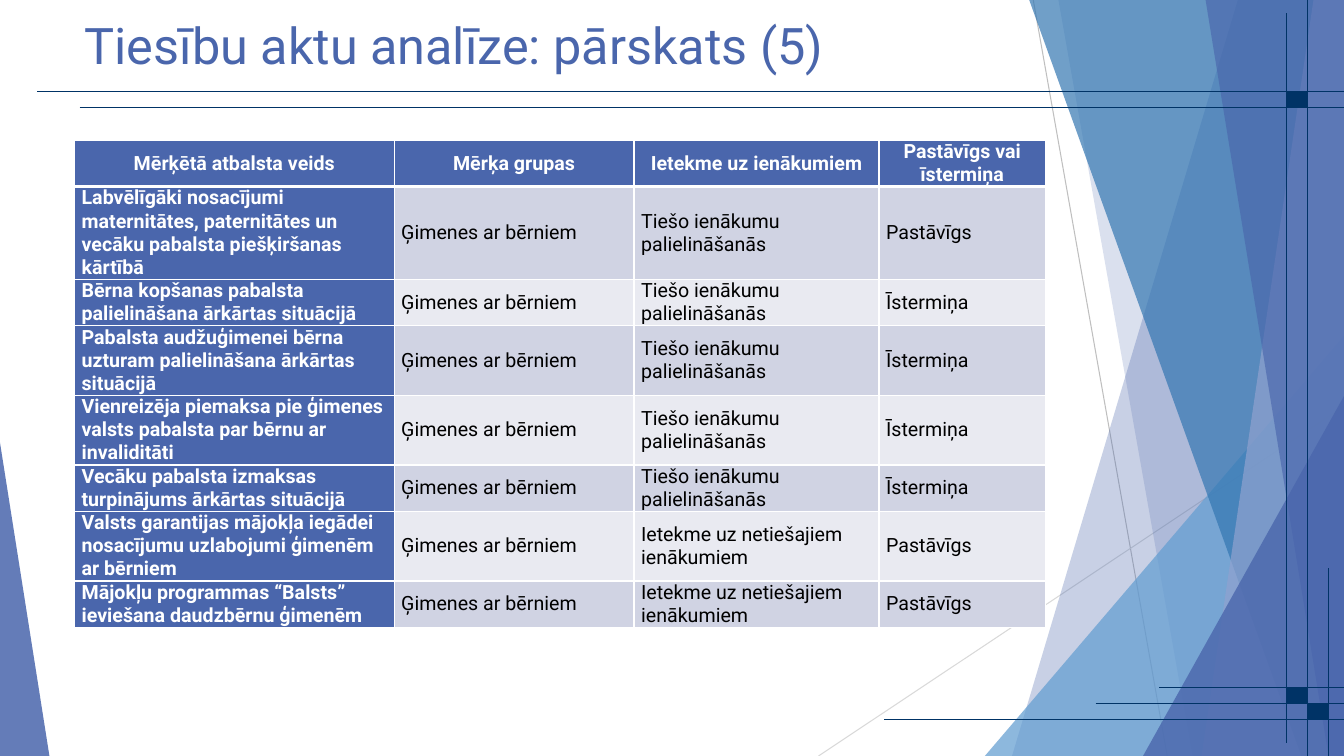
from lxml.etree import SubElement
from pptx import Presentation
from pptx.dml.color import RGBColor
from pptx.enum.shapes import MSO_CONNECTOR as Connector, MSO_SHAPE as Shape
from pptx.enum.text import MSO_ANCHOR as Anchor, PP_ALIGN as Align
from pptx.oxml.ns import qn
from pptx.util import Inches, Pt

BLUE = RGBColor(0x4A, 0x66, 0xAC)
SKY = RGBColor(0x62, 0x9D, 0xD1)
OCEAN = RGBColor(0x34, 0x77, 0xB2)
LAVENDER = RGBColor(0x90, 0xA2, 0xCF)
NAVY = RGBColor(0x00, 0x33, 0x66)
GREY = RGBColor(0xBF, 0xBF, 0xBF)
PALE_GREY = RGBColor(0xD9, 0xD9, 0xD9)
DARK_BAND = RGBColor(0xD0, 0xD3, 0xE3)
LIGHT_BAND = RGBColor(0xE9, 0xEA, 0xF1)
WHITE = RGBColor(0xFF, 0xFF, 0xFF)
BLACK = RGBColor(0, 0, 0)

# All lengths below are percentages of the slide's width or height.
# Bands run to the right edge: top-left x, bottom-left x, colour, opacity.
BANDS_BEHIND = [(92.1, 75.3, BLUE, 30), (78.75, 88.73, BLUE, 20)]
BANDS_IN_FRONT = [
    (76.58, 96.83, OCEAN, 70),
    (97.73, 89.4, LAVENDER, 70),
    (89.7, 98.85, BLUE, 65),
]
# Rules: start x, start y, end x, end y.
RULES = [
    (2.78, 12.13, 100, 12.13),
    (5.93, 14.27, 100, 14.27),
    (97.28, 0, 97.28, 100),
    (95.7, 1.73, 95.7, 98.27),
    (81.53, 93.07, 100, 93.07),
    (86.25, 90.93, 100, 90.93),
    (65.78, 95.2, 100, 95.2),
    (98.85, 75.2, 98.85, 100),
]
SQUARES = [(95.7, 12.13), (95.7, 90.93), (97.28, 93.07)]

COLUMN_WIDTHS = [23.78, 17.85, 18.23, 12.38]
LINE_HEIGHT = 3.07
HEADER = ["Mērķētā atbalsta veids", "Mērķa grupas",
          "Ietekme uz ienākumiem", "Pastāvīgs vai īstermiņa"]
FAMILIES = "Ģimenes ar bērniem"
DIRECT = "Tiešo ienākumu palielināšanās"
INDIRECT = "Ietekme uz netiešajiem ienākumiem"
LASTING = "Pastāvīgs"
SHORT_TERM = "Īstermiņa"
# Support measure, income effect, duration, number of text lines.
MEASURES = [
    ("Labvēlīgāki nosacījumi maternitātes, paternitātes un vecāku pabalsta "
     "piešķiršanas kārtībā", DIRECT, LASTING, 4),
    ("Bērna kopšanas pabalsta palielināšana ārkārtas situācijā", DIRECT, SHORT_TERM, 2),
    ("Pabalsta audžuģimenei bērna uzturam palielināšana ārkārtas situācijā",
     DIRECT, SHORT_TERM, 3),
    ("Vienreizēja piemaksa pie ģimenes valsts pabalsta par bērnu ar invaliditāti",
     DIRECT, SHORT_TERM, 3),
    ("Vecāku pabalsta izmaksas turpinājums ārkārtas situācijā", DIRECT, SHORT_TERM, 2),
    ("Valsts garantijas mājokļa iegādei nosacījumu uzlabojumi ģimenēm ar bērniem",
     INDIRECT, LASTING, 3),
    ("Mājokļu programmas “Balsts” ieviešana daudzbērnu ģimenēm", INDIRECT, LASTING, 2),
]


class SlideBuilder:
    font_name = "Roboto"

    def __init__(self, deck):
        self.width, self.height = deck.slide_width, deck.slide_height
        self.slide = deck.slides.add_slide(deck.slide_layouts[5])
        self.shapes = self.slide.shapes

    def x(self, share):
        return round(self.width * share / 100)

    def y(self, share):
        return round(self.height * share / 100)

    def area(self, left, top, width, height):
        return self.x(left), self.y(top), self.x(width), self.y(height)

    def style_text(self, para, size, color, bold=False, align=Align.LEFT):
        para.alignment = align
        para.font.name, para.font.size = self.font_name, Pt(size)
        para.font.color.rgb, para.font.bold = color, bold

    def paint(self, shape, color, opacity=100):
        shape.shadow.inherit = False
        shape.fill.solid()
        shape.fill.fore_color.rgb = color
        shape.line.fill.background()
        if opacity < 100:
            paint = shape._element.spPr.find(qn("a:solidFill"))[0]
            SubElement(paint, qn("a:alpha"), val=str(opacity * 1000))

    def line(self, start_x, start_y, end_x, end_y, color=NAVY):
        rule = self.shapes.add_connector(
            Connector.STRAIGHT, self.x(start_x), self.y(start_y),
            self.x(end_x), self.y(end_y))
        rule.line.color.rgb, rule.line.width = color, Pt(0.75)
        SubElement(rule._element.spPr, qn("a:effectLst"))

    def band(self, top_x, bottom_x, color, opacity):
        outline = self.shapes.build_freeform(self.x(top_x), 0)
        outline.add_line_segments([
            (self.width, 0), (self.width, self.height),
            (self.x(bottom_x), self.height)])
        self.paint(outline.convert_to_shape(), color, opacity)

    def triangle(self, left, top, width, apex, color, opacity):
        """Draw a triangle standing on the bottom edge; apex is 0 to 1."""
        shape = self.shapes.add_shape(
            Shape.ISOSCELES_TRIANGLE, *self.area(left, top, width, 100 - top))
        shape.adjustments[0] = apex
        self.paint(shape, color, opacity)

    def square(self, left, top):
        shape = self.shapes.add_shape(Shape.RECTANGLE, *self.area(left, top, 1.58, 2.13))
        self.paint(shape, NAVY)
        shape.line.color.rgb, shape.line.width = NAVY, Pt(0.75)

    def title(self, text, left, top, width, height):
        box = self.shapes.title
        box.left, box.top, box.width, box.height = self.area(left, top, width, height)
        box.text_frame.text = text
        box.text_frame.word_wrap = True
        box.text_frame.vertical_anchor = Anchor.MIDDLE
        para = box.text_frame.paragraphs[0]
        para.line_spacing = 0.9
        self.style_text(para, 36, BLUE)

    def borders(self, cell, top, bottom):
        properties = cell._tc.get_or_add_tcPr()
        for side, points in (("L", 1), ("R", 1), ("T", top), ("B", bottom)):
            edge = SubElement(properties, qn(f"a:ln{side}"), w=str(Pt(points)))
            fill = SubElement(edge, qn("a:solidFill"))
            SubElement(fill, qn("a:srgbClr"), val=str(WHITE))

    def cell(self, cell, text, row, column):
        is_label = row == 0 or column == 0
        self.borders(cell, top=3 if row == 1 else 1, bottom=3 if row == 0 else 1)
        cell.fill.solid()
        band = DARK_BAND if row % 2 else LIGHT_BAND
        cell.fill.fore_color.rgb = BLUE if is_label else band
        cell.margin_left = cell.margin_right = Inches(0.07)
        cell.margin_top = cell.margin_bottom = 0
        cell.vertical_anchor = Anchor.MIDDLE
        cell.text = text
        self.style_text(cell.text_frame.paragraphs[0], 14, WHITE if is_label else BLACK,
                        is_label, Align.LEFT if row else Align.CENTER)

    def table(self, left, top, widths, rows, line_counts):
        place = self.area(left, top, sum(widths), sum(line_counts) * LINE_HEIGHT)
        table = self.shapes.add_table(len(rows), len(widths), *place).table
        for column, width in zip(table.columns, widths):
            column.width = self.x(width)
        for row, count in zip(table.rows, line_counts):
            row.height = self.y(count * LINE_HEIGHT)
        for r, texts in enumerate(rows):
            for c, text in enumerate(texts):
                self.cell(table.cell(r, c), text, r, c)


def main():
    deck = Presentation()
    deck.slide_width, deck.slide_height = Inches(13.33), Inches(7.5)
    page = SlideBuilder(deck)

    page.line(76.88, 0, 86.85, 100, GREY)
    page.line(100, 53.73, 60.9, 100, PALE_GREY)
    for band in BANDS_BEHIND:
        page.band(*band)
    page.triangle(73.28, 44.4, 26.72, 1, SKY, 72)
    for band in BANDS_IN_FRONT:
        page.band(*band)
    page.triangle(85.05, 52.4, 14.95, 1, BLUE, 80)
    page.triangle(0, 58.53, 3.68, 0, BLUE, 85)
    for rule in RULES:
        page.line(*rule)
    for square in SQUARES:
        page.square(*square)

    page.title("Tiesību aktu analīze: pārskats (5)", 5.55, 0.53, 70.5, 11.6)
    rows = [HEADER] + [(name, FAMILIES, effect, duration)
                       for name, effect, duration, _ in MEASURES]
    line_counts = [2] + [measure[-1] for measure in MEASURES]
    page.table(5.55, 18.53, COLUMN_WIDTHS, rows, line_counts)
    deck.save("out.pptx")


if __name__ == "__main__":
    main()
